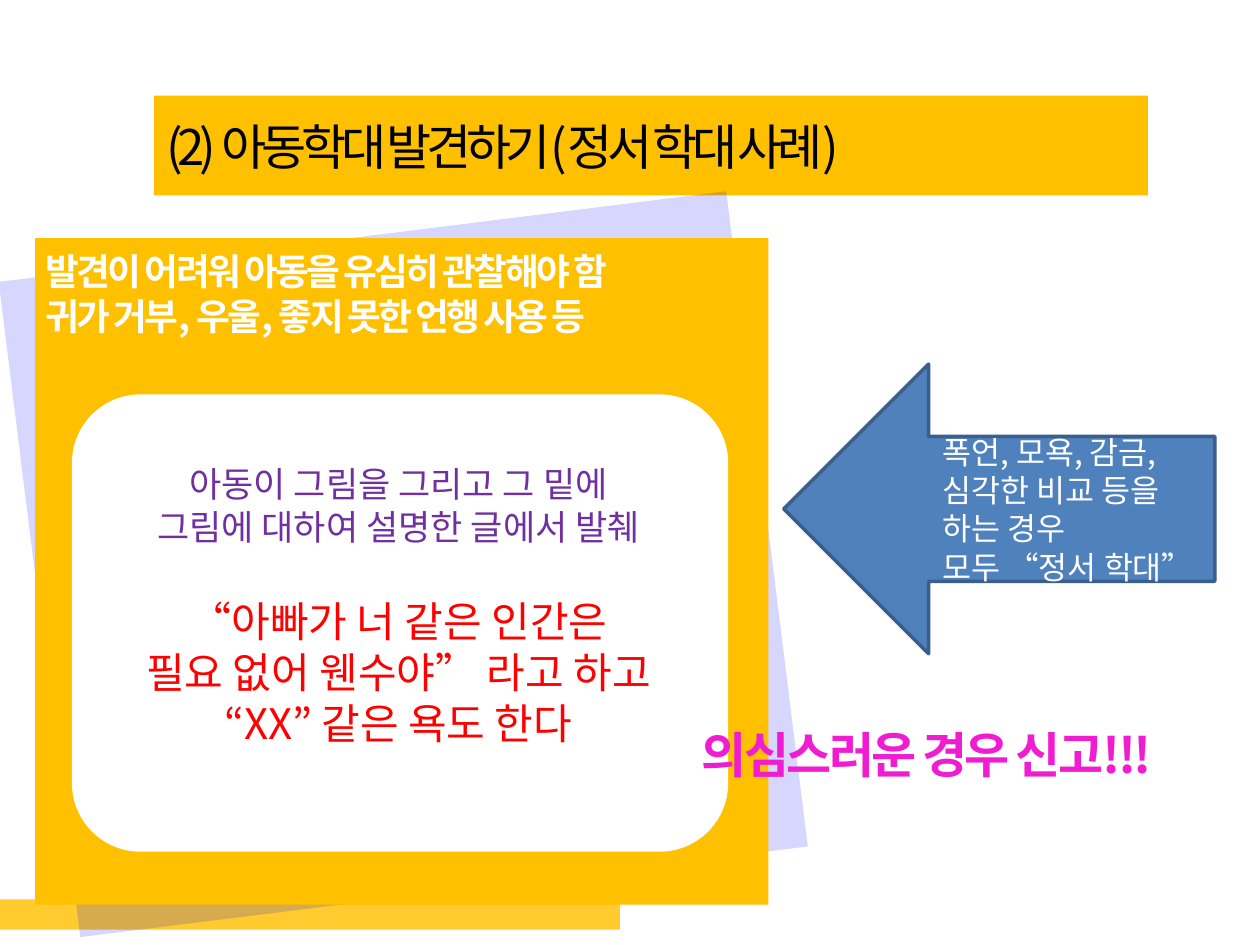
from lxml.etree import SubElement
from pptx import Presentation
from pptx.dml.color import RGBColor
from pptx.enum.shapes import MSO_SHAPE
from pptx.enum.text import MSO_ANCHOR, PP_ALIGN
from pptx.oxml.ns import qn
from pptx.util import Cm, Pt

FONT = "Noto Sans CJK KR"
GOLD = RGBColor(0xFF, 0xC0, 0x00)
BLUE = RGBColor(0x00, 0x00, 0xFF)
STEEL = RGBColor(0x4F, 0x81, 0xBD)
NAVY = RGBColor(0x3A, 0x5F, 0x8C)
PURPLE = RGBColor(0x70, 0x30, 0xA0)
RED = RGBColor(0xFF, 0x00, 0x00)
PINK = RGBColor(0xF0, 0x1C, 0xD2)
WHITE = RGBColor(0xFF, 0xFF, 0xFF)
BLACK = RGBColor(0x00, 0x00, 0x00)


def add_text(frame, lines, size, color, bold=False, align=PP_ALIGN.LEFT,
             track=0, pitch=1.21, gap=0):
    """Append lines; track is letter spacing and gap the space above, in points."""
    for i, line in enumerate(lines):
        para = frame.paragraphs[0]
        if para.runs:
            para = frame.add_paragraph()
        para.alignment = align
        para.space_before = Pt(0 if i else gap)
        if pitch:
            para.line_spacing = Pt(round(size * pitch, 1))
        run = para.add_run()
        run.text = line
        font = run.font
        font.size, font.bold, font.name = Pt(size), bold, FONT
        font.color.rgb = color
        props = run._r.get_or_add_rPr()
        SubElement(props, qn("a:ea")).set("typeface", FONT)
        if track:
            props.set("spc", str(int(track * 100)))


def add_box(slide, left, top, width, height):
    box = slide.shapes.add_textbox(Cm(left), Cm(top), Cm(width), Cm(height))
    box.text_frame.word_wrap = True
    return box.text_frame


def add_form(slide, kind, left, top, width, height, fill, alpha=None):
    """Add a filled shape without a line; alpha is its opacity in percent."""
    form = slide.shapes.add_shape(kind, Cm(left), Cm(top), Cm(width), Cm(height))
    form.shadow.inherit = False
    form.fill.solid()
    form.fill.fore_color.rgb = fill
    form.line.fill.background()
    if alpha:
        tone = form._element.spPr.find(qn("a:solidFill"))[0]
        SubElement(tone, qn("a:alpha")).set("val", str(alpha * 1000))
    return form


def set_title(slide, text):
    title = slide.shapes.title
    title.left, title.top = Cm(3.1), Cm(1.93)
    title.width, title.height = Cm(20.04), Cm(2.01)
    title.fill.solid()
    title.fill.fore_color.rgb = GOLD
    frame = title.text_frame
    frame.vertical_anchor = MSO_ANCHOR.MIDDLE
    add_text(frame, [text], 28, BLACK, track=-3, pitch=None)


def add_panel(slide):
    tilt = add_form(slide, MSO_SHAPE.RECTANGLE, 0.74, 4.72, 14.78, 13.31, BLUE, 16)
    tilt.rotation = -7.1
    add_form(slide, MSO_SHAPE.RECTANGLE, 0.71, 4.8, 14.78, 13.44, GOLD)
    card = add_form(slide, MSO_SHAPE.ROUNDED_RECTANGLE, 1.45, 7.95, 13.23, 9.22, WHITE)
    card.adjustments[0] = 0.15

    head = add_box(slide, 0.67, 4.89, 15.1, 2.06)
    add_text(head, ["발견이 어려워 아동을 유심히 관찰해야 함",
                    "귀가 거부, 우울, 좋지 못한 언행 사용 등"],
             21, WHITE, bold=True, track=-1.5)

    quote = add_box(slide, 1.75, 9.2, 12.57, 6.07)
    add_text(quote, ["아동이 그림을 그리고 그 밑에",
                     "그림에 대하여 설명한 글에서 발췌"],
             20, PURPLE, align=PP_ALIGN.CENTER)
    add_text(quote, ["“아빠가 너 같은 인간은",
                     "필요 없어 웬수야” 라고 하고",
                     "“XX” 같은 욕도 한다"],
             24, RED, align=PP_ALIGN.CENTER, gap=27.5)


def add_arrow(slide):
    arrow = add_form(slide, MSO_SHAPE.LEFT_ARROW, 15.8, 7.34, 8.69, 5.84, STEEL)
    arrow.line.color.rgb = NAVY
    arrow.line.width = Pt(2)
    note = add_box(slide, 18.75, 8.6, 5.7, 5.64)
    add_text(note, ["폭언, 모욕, 감금,", "심각한 비교 등을",
                    "하는 경우", "모두 “정서 학대”"], 18, WHITE)


def main():
    deck = Presentation()
    deck.slide_width, deck.slide_height = Cm(25.4), Cm(19.05)
    slide = deck.slides.add_slide(deck.slide_layouts[5])
    add_form(slide, MSO_SHAPE.RECTANGLE, 0, 18.13, 12.5, 0.61, GOLD, 82)
    set_title(slide, "(2) 아동학대 발견하기(정서 학대 사례)")
    add_panel(slide)
    add_arrow(slide)
    alert = add_box(slide, 13.9, 14.48, 10.49, 1.45)
    add_text(alert, ["의심스러운 경우 신고!!!"], 28, PINK, bold=True, track=-1.5)
    deck.save("out.pptx")


if __name__ == "__main__":
    main()
